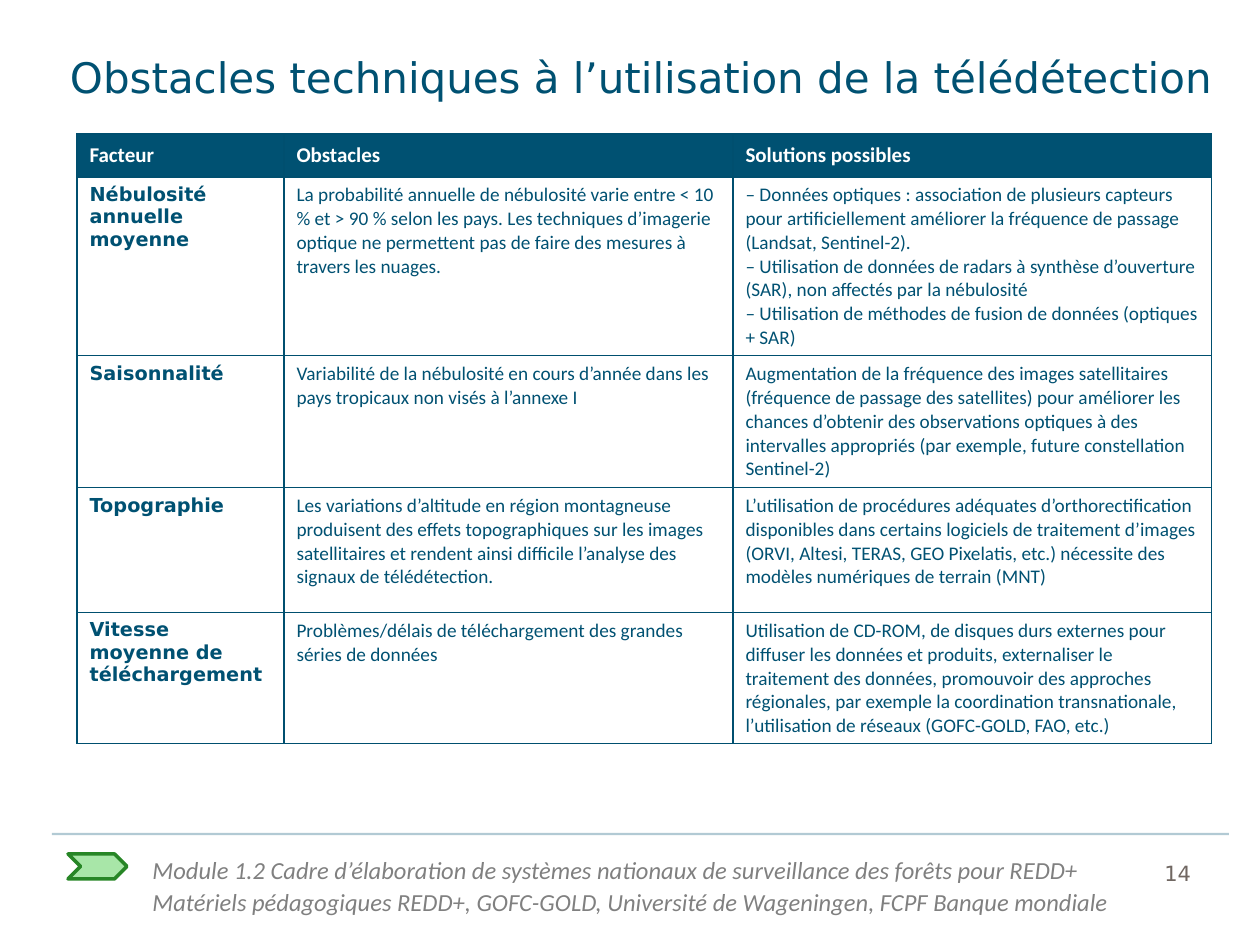
"""Builds the slide on technical obstacles to the use of remote sensing."""
from lxml.etree import SubElement
from pptx import Presentation
from pptx.dml.color import RGBColor
from pptx.enum.shapes import MSO_CONNECTOR, MSO_SHAPE
from pptx.enum.text import MSO_ANCHOR, MSO_AUTO_SIZE, PP_ALIGN
from pptx.oxml.ns import qn
from pptx.util import Pt

PX = 914400 // 126
BLUE, GRID, WHITE = "005172", "004F6F", "FFFFFF"
SANS, BODY = "DejaVu Sans", "Calibri"

TITLE = "Obstacles techniques à l’utilisation de la télédétection"
HEADER = ["Facteur", "Obstacles", "Solutions possibles"]
FACTORS = [
    ("Nébulosité annuelle moyenne",
     ["La probabilité annuelle de nébulosité varie entre < 10 % et > 90 % selon les pays. "
      "Les techniques d’imagerie optique ne permettent pas de faire des mesures à travers les nuages."],
     ["– Données optiques : association de plusieurs capteurs pour artificiellement améliorer "
      "la fréquence de passage (Landsat, Sentinel-2).",
      "– Utilisation de données de radars à synthèse d’ouverture (SAR), non affectés par la nébulosité",
      "– Utilisation de méthodes de fusion de données (optiques + SAR)"]),
    ("Saisonnalité",
     ["Variabilité de la nébulosité en cours d’année dans les pays tropicaux non visés à l’annexe I"],
     ["Augmentation de la fréquence des images satellitaires (fréquence de passage des satellites) "
      "pour améliorer les chances d’obtenir des observations optiques à des intervalles appropriés "
      "(par exemple, future constellation Sentinel-2)"]),
    ("Topographie",
     ["Les variations d’altitude en région montagneuse produisent des effets topographiques sur les "
      "images satellitaires et rendent ainsi difficile l’analyse des signaux de télédétection."],
     ["L’utilisation de procédures adéquates d’orthorectification disponibles dans certains logiciels "
      "de traitement d’images (ORVI, Altesi, TERAS, GEO Pixelatis, etc.) nécessite des modèles "
      "numériques de terrain (MNT)"]),
    ("Vitesse moyenne de téléchargement",
     ["Problèmes/délais de téléchargement des grandes séries de données"],
     ["Utilisation de CD-ROM, de disques durs externes pour diffuser les données et produits, "
      "externaliser le traitement des données, promouvoir des approches régionales, par exemple "
      "la coordination transnationale, l’utilisation de réseaux (GOFC-GOLD, FAO, etc.)"]),
]
FOOTER = [
    "Module 1.2 Cadre d’élaboration de systèmes nationaux de surveillance des forêts pour REDD+",
    "Matériels pédagogiques REDD+, GOFC-GOLD, Université de Wageningen, FCPF Banque mondiale",
]
PAGE = ["14"]

TITLE_BOX = (68, 32, 1163, 97)
TITLE_INSETS = (2, 0, 12, 44)
TABLE_ORIGIN = (77, 134)
COLUMNS = [207, 449, 479]
ROWS = [43, 179, 132, 125, 131]
RULE = (52, 834, 1229, 834)
CHEVRON_BOX = (68, 854, 59, 25)
FOOTER_BOX = (140, 847, 994, 77)
PAGE_BOX = (1152, 848, 77, 42)


def px(*values):
    return [value * PX for value in values]


def color(code):
    return RGBColor.from_string(code)


def write(frame, lines, size, face, ink, bold=False, italic=False, spacing=None):
    frame.word_wrap = True
    for index, line in enumerate(lines):
        paragraph = frame.add_paragraph() if index else frame.paragraphs[0]
        paragraph.alignment = PP_ALIGN.LEFT
        if spacing:
            paragraph.line_spacing = Pt(spacing)
            paragraph.space_before = Pt(0)
        run = paragraph.add_run()
        run.text = line
        run.font.size = Pt(size)
        run.font.name = face
        run.font.bold = bold
        run.font.italic = italic
        run.font.color.rgb = color(ink)


def style_cell(cell, fill=None):
    properties = cell._tc.get_or_add_tcPr()
    for side in ("a:lnL", "a:lnR", "a:lnT", "a:lnB"):
        border = SubElement(properties, qn(side), w=str(Pt(0.75)))
        SubElement(SubElement(border, qn("a:solidFill")), qn("a:srgbClr"), val=GRID)
    if fill:
        cell.fill.solid()
        cell.fill.fore_color.rgb = color(fill)
    else:
        cell.fill.background()


def add_title(slide):
    title = slide.shapes.title
    title.left, title.top, title.width, title.height = px(*TITLE_BOX)
    frame = title.text_frame
    frame.auto_size = MSO_AUTO_SIZE.NONE
    frame.vertical_anchor = MSO_ANCHOR.TOP
    (frame.margin_left, frame.margin_top,
     frame.margin_right, frame.margin_bottom) = px(*TITLE_INSETS)
    write(frame, [TITLE], 24, SANS, BLUE, spacing=40)


def add_factor_table(slide):
    table = slide.shapes.add_table(
        len(ROWS), len(COLUMNS), *px(*TABLE_ORIGIN, sum(COLUMNS), sum(ROWS))).table
    table.first_row = True
    table.horz_banding = False
    for column, width in zip(table.columns, COLUMNS):
        column.width = width * PX
    for row, height in zip(table.rows, ROWS):
        row.height = height * PX
    for column, heading in enumerate(HEADER):
        cell = table.cell(0, column)
        style_cell(cell, BLUE)
        cell.vertical_anchor = MSO_ANCHOR.MIDDLE
        write(cell.text_frame, [heading], 12, BODY, WHITE, bold=True)
    for row, (factor, *details) in enumerate(FACTORS, 1):
        for column, lines in enumerate([[factor], *details]):
            cell = table.cell(row, column)
            style_cell(cell)
            is_factor = column == 0
            write(cell.text_frame, lines, 11, SANS if is_factor else BODY, BLUE, bold=is_factor)


def add_footer(slide):
    rule = slide.shapes.add_connector(MSO_CONNECTOR.STRAIGHT, *px(*RULE))
    rule.line.width = Pt(1.25)
    rule.line.color.rgb = color(BLUE)
    ink = rule.line._ln.find(".//" + qn("a:srgbClr"))
    SubElement(ink, qn("a:alpha"), val="30000")
    SubElement(rule._element.spPr, qn("a:effectLst"))

    chevron = slide.shapes.add_shape(MSO_SHAPE.CHEVRON, *px(*CHEVRON_BOX))
    chevron.shadow.inherit = False
    chevron.fill.solid()
    chevron.fill.fore_color.rgb = color("A8E6A8")
    chevron.line.color.rgb = color("278626")
    chevron.line.width = Pt(2)
    SubElement(chevron.line._ln, qn("a:round"))

    credits = slide.shapes.add_textbox(*px(*FOOTER_BOX))
    write(credits.text_frame, FOOTER, 14, BODY, "808080", italic=True, spacing=18)
    number = slide.shapes.add_textbox(*px(*PAGE_BOX))
    write(number.text_frame, PAGE, 12, SANS, "706762", spacing=18)


def main():
    deck = Presentation()
    deck.slide_width, deck.slide_height = px(1260, 945)
    slide = deck.slides.add_slide(deck.slide_layouts[5])
    add_footer(slide)
    add_title(slide)
    add_factor_table(slide)
    deck.save("out.pptx")


if __name__ == "__main__":
    main()
